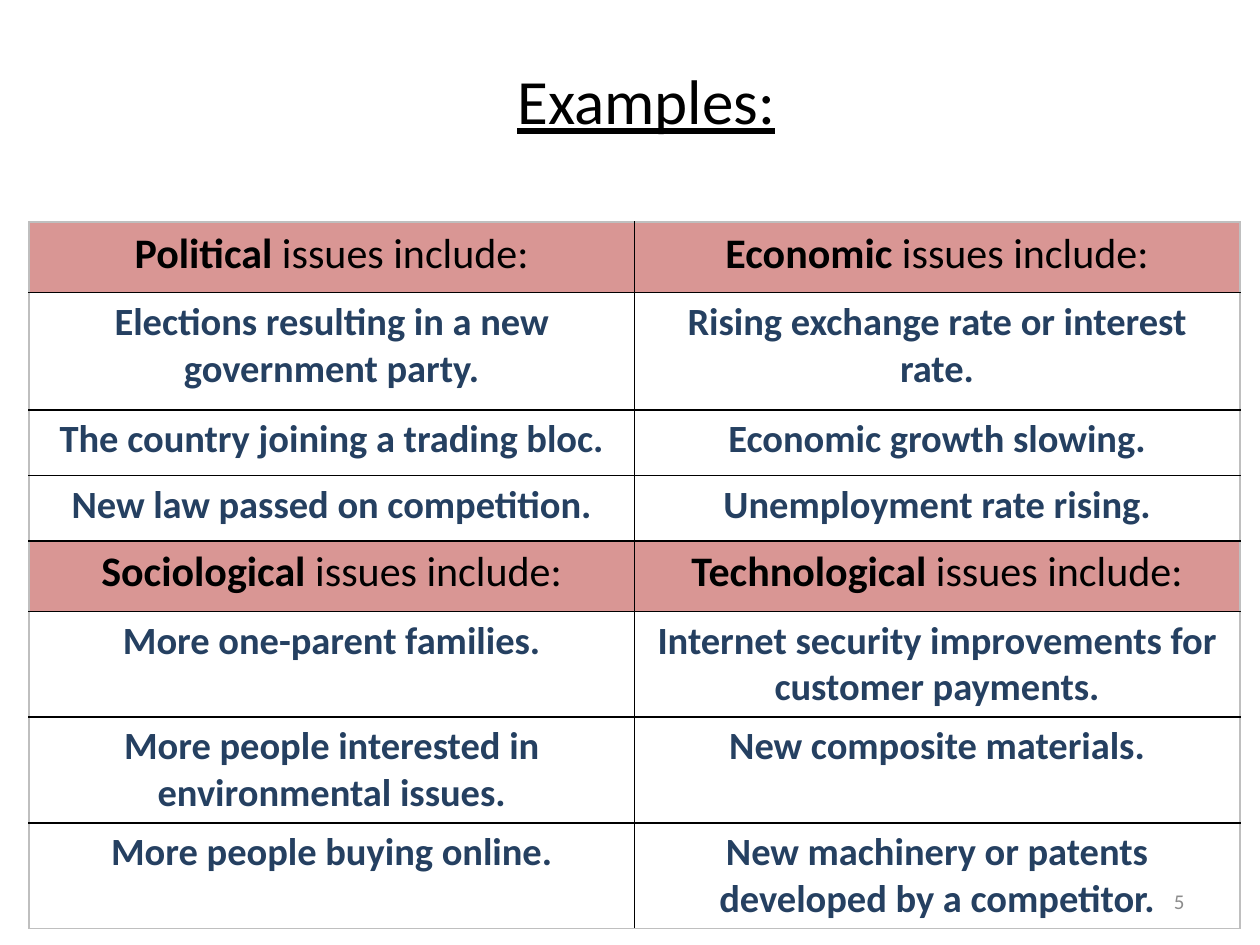
import pptx
import pptx.dml.color
import pptx.enum.text
import pptx.oxml
import pptx.oxml.ns
import pptx.util
from lxml import etree

RGB = pptx.dml.color.RGBColor
BLACK = RGB(0x00, 0x00, 0x00)
NAVY = RGB(0x25, 0x40, 0x61)
ROSE = RGB(0xD9, 0x96, 0x94)
GREY = RGB(0x8C, 0x8C, 0x8C)
EDGE = RGB(0xBF, 0xBF, 0xBF)
ALIGN = pptx.enum.text.PP_ALIGN
MIDDLE = pptx.enum.text.MSO_ANCHOR.MIDDLE

WIDTH, HEIGHT = pptx.util.Inches(10), pptx.util.Inches(7.5)
ROW_HEIGHTS = [0.56, 0.93, 0.52, 0.52, 0.56, 0.84, 0.84, 0.84]  # inches

TITLE_FORMAT = {"size": 36, "underline": True, "color": BLACK}
HEADING_FORMAT = {"size": 24, "color": BLACK}
ISSUE_FORMAT = {"size": 22, "bold": True, "color": NAVY}
NUMBER_FORMAT = {"size": 12, "color": GREY}

# A one-word row holds the headings of a group; the other rows hold its issues.
ROWS = [
    ("Political", "Economic"),
    ("Elections resulting in a new government party.",
     "Rising exchange rate or interest rate."),
    ("The country joining a trading bloc.", "Economic growth slowing."),
    ("New law passed on competition.", "Unemployment rate rising."),
    ("Sociological", "Technological"),
    ("More one-parent families.",
     "Internet security improvements for customer payments."),
    ("More people interested in environmental issues.",
     "New composite materials."),
    ("More people buying online.",
     "New machinery or patents developed by a competitor."),
]
HEADING_ROWS = (0, 4)


def share(left, top, width, height):
    """Turn shares of the slide's size into a box of lengths."""
    return (int(left * WIDTH), int(top * HEIGHT),
            int(width * WIDTH), int(height * HEIGHT))


def add_span(para, text, formats, **extra):
    span = para.add_run()
    span.text = text
    span.font.name = "Calibri"
    for name, value in {**formats, **extra}.items():
        if name == "color":
            span.font.color.rgb = value
        elif name == "size":
            span.font.size = pptx.util.Pt(value)
        else:
            setattr(span.font, name, value)


def add_title(page, box, text):
    title = page.shapes.title
    title.left, title.top, title.width, title.height = box
    title.text_frame.vertical_anchor = MIDDLE
    para = title.text_frame.paragraphs[0]
    para.alignment = ALIGN.CENTER
    add_span(para, text, TITLE_FORMAT)


def add_page_number(page, box, text):
    frame = page.shapes.add_textbox(*box).text_frame
    frame.word_wrap = True
    frame.vertical_anchor = MIDDLE
    para = frame.paragraphs[0]
    para.alignment = ALIGN.RIGHT
    add_span(para, text, NUMBER_FORMAT)


def set_borders(cell, colors):
    """Draw the left, right, top and bottom borders in the given colours."""
    properties = cell._tc.get_or_add_tcPr()
    for index, (side, color) in enumerate(zip("LRTB", colors)):
        line = pptx.oxml.parse_xml(
            f'<a:ln{side} {pptx.oxml.ns.nsdecls("a")} w="12700">'
            f'<a:solidFill><a:srgbClr val="{color}"/></a:solidFill></a:ln{side}>')
        properties.insert(index, line)


def fill_cell(cell, text, is_heading):
    para = cell.text_frame.paragraphs[0]
    para.alignment = ALIGN.CENTER
    if is_heading:
        cell.fill.solid()
        cell.fill.fore_color.rgb = ROSE
        add_span(para, text, HEADING_FORMAT, bold=True)
        add_span(para, " issues include:", HEADING_FORMAT, bold=False)
    else:
        cell.fill.background()
        add_span(para, text, ISSUE_FORMAT)


def add_issue_table(page, box):
    last_row, last_column = len(ROWS) - 1, len(ROWS[0]) - 1
    table = page.shapes.add_table(len(ROWS), len(ROWS[0]), *box).table
    table.first_row = table.horz_banding = False
    for row, height in zip(table.rows, ROW_HEIGHTS):
        row.height = pptx.util.Inches(height)
    for r, texts in enumerate(ROWS):
        for c, text in enumerate(texts):
            cell = table.cell(r, c)
            fill_cell(cell, text, r in HEADING_ROWS)
            outer = (c == 0, c == last_column, r == 0, r == last_row)
            set_borders(cell, [EDGE if side else BLACK for side in outer])


def main():
    deck = pptx.Presentation()
    deck.slide_width, deck.slide_height = WIDTH, HEIGHT
    page = deck.slides.add_slide(deck.slide_layouts[5])
    add_title(page, share(0.067, 0.033, 0.892, 0.144), "Examples:")
    add_page_number(page, share(0.717, 0.927, 0.233, 0.053), "5")
    add_issue_table(page, share(0.023, 0.235, 0.961, 0.744))
    deck.save("out.pptx")


if __name__ == "__main__":
    main()
